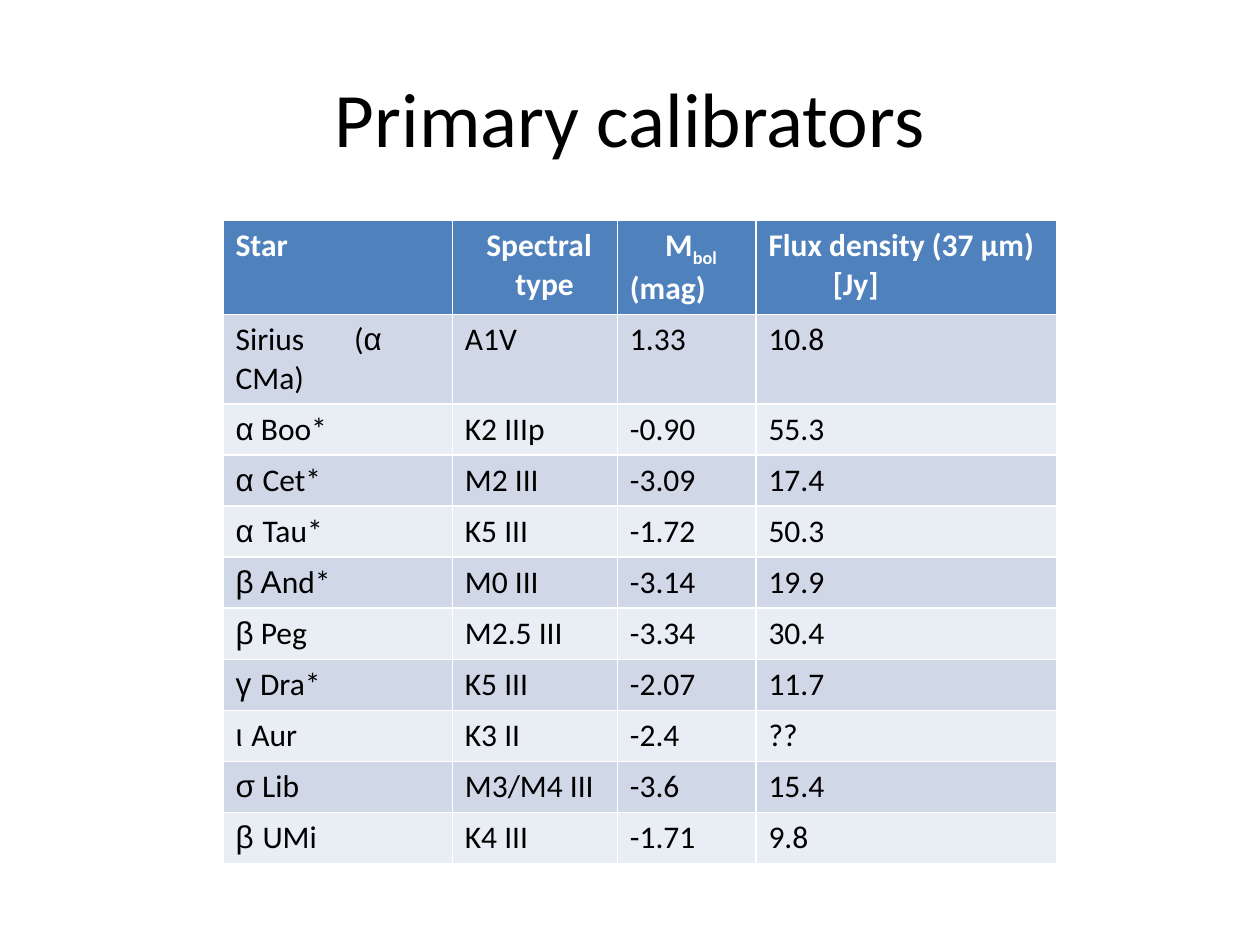
from dataclasses import dataclass

from lxml.etree import SubElement
from pptx import Presentation
from pptx.dml.color import RGBColor
from pptx.enum.text import MSO_ANCHOR as Anchor, PP_ALIGN as Align
from pptx.oxml.ns import qn
from pptx.slide import Slide
from pptx.util import Inches, Pt


def color(hex_code):
    return RGBColor.from_string(hex_code)


COLUMN_WIDTHS = [1.82, 1.31, 1.1, 2.39]
ROW_HEIGHT = 0.4
SIRIUS_TAB = 0.94

HEADINGS = [
    [(0, [("Star", "")])],
    [(0.17, [("Spectral", "")]), (0.4, [("type", "")])],
    [(0.28, [("M", ""), ("bol", "subscript")]), (0, [("(mag)", "")])],
    [(0, [("Flux density (37 µm)", "")]), (0.51, [("[Jy]", "")])],
]

STARS = [
    ("", "Sirius\t(", "α ", "CMa)", "A1V", "1.33", "10.8"),
    ("", "", "α", " Boo*", "K2 IIIp", "-0.90", "55.3"),
    ("", "", "α ", "Cet*", "M2 III", "-3.09", "17.4"),
    ("", "", "α ", "Tau*", "K5 III", "-1.72", "50.3"),
    ("", "", "β Α", "nd*", "M0 III", "-3.14", "19.9"),
    ("", "", "β", " Peg", "M2.5 III", "-3.34", "30.4"),
    ("", "", "γ ", "Dra*", "K5 III", "-2.07", "11.7"),
    ("", "", "ι ", "Aur", "K3 II", "-2.4", "??"),
    ("", "", "σ", " Lib", "M3/M4 III", "-3.6", "15.4"),
    ("", "", "β ", "UMi", "K4 III", "-1.71", "9.8"),
]


def star_cells(star):
    _, common_name, greek, constellation, *values = star
    name = [(common_name, ""), (greek, "greek"), (constellation, "")]
    name = [(text, role) for text, role in name if text]
    return [[(0, name)]] + [[(0, [(value, "")])] for value in values]


@dataclass
class CalibratorSlide:
    slide: Slide
    font: str = "Calibri"
    greek_font: str = "Arial"
    ink: str = "000000"
    heading_ink: str = "FFFFFF"
    heading_fill: str = "4F81BD"
    bands: tuple = ("D0D8E8", "E9EDF4")

    def style(self, paragraph, size, ink, bold=False):
        paragraph.font.name = self.font
        paragraph.font.size = Pt(size)
        paragraph.font.bold = bold
        paragraph.font.color.rgb = color(ink)

    def title(self, text):
        title = self.slide.shapes.title
        title.left, title.top = Inches(0.5), Inches(0.3)
        title.width, title.height = Inches(9), Inches(1.25)
        title.text_frame.text = text
        title.text_frame.vertical_anchor = Anchor.MIDDLE
        paragraph = title.text_frame.paragraphs[0]
        paragraph.alignment = Align.CENTER
        self.style(paragraph, 44, self.ink)

    def paragraph(self, paragraph, indent, runs, ink, bold):
        self.style(paragraph, 18, ink, bold)
        properties = paragraph._p.get_or_add_pPr()
        if indent:
            properties.set("marL", str(Inches(indent)))
            properties.set("indent", "0")
        if any("\t" in text for text, _ in runs):
            tabs = SubElement(properties, qn("a:tabLst"))
            SubElement(tabs, qn("a:tab"), pos=str(Inches(SIRIUS_TAB)), algn="l")
            properties.insert(0, tabs)
        for text, role in runs:
            run = paragraph.add_run()
            run.text = text
            if role == "greek":
                run.font.name = self.greek_font
            elif role == "subscript":
                run._r.get_or_add_rPr().set("baseline", "-25000")

    def cell(self, cell, paragraphs, fill, ink, bold):
        cell.fill.solid()
        cell.fill.fore_color.rgb = color(fill)
        frame = cell.text_frame
        for number, (indent, runs) in enumerate(paragraphs):
            paragraph = frame.add_paragraph() if number else frame.paragraphs[0]
            self.paragraph(paragraph, indent, runs, ink, bold)

    def table(self, left, top, headings, rows):
        row_count = len(rows) + 1
        table = self.slide.shapes.add_table(
            row_count, len(headings), Inches(left), Inches(top),
            Inches(sum(COLUMN_WIDTHS)), Inches(ROW_HEIGHT * row_count),
        ).table
        for column, width in zip(table.columns, COLUMN_WIDTHS):
            column.width = Inches(width)
        for column, heading in enumerate(headings):
            self.cell(table.cell(0, column), heading,
                      self.heading_fill, self.heading_ink, True)
        for row, cells in enumerate(rows, start=1):
            band = self.bands[(row - 1) % 2]
            for column, content in enumerate(cells):
                self.cell(table.cell(row, column), content, band, self.ink, False)


def main():
    deck = Presentation()
    deck.slide_width, deck.slide_height = Inches(10), Inches(7.5)
    calibrators = CalibratorSlide(deck.slides.add_slide(deck.slide_layouts[5]))
    calibrators.title("Primary calibrators")
    calibrators.table(1.77, 1.75, HEADINGS, [star_cells(star) for star in STARS])
    deck.save("out.pptx")


if __name__ == "__main__":
    main()
